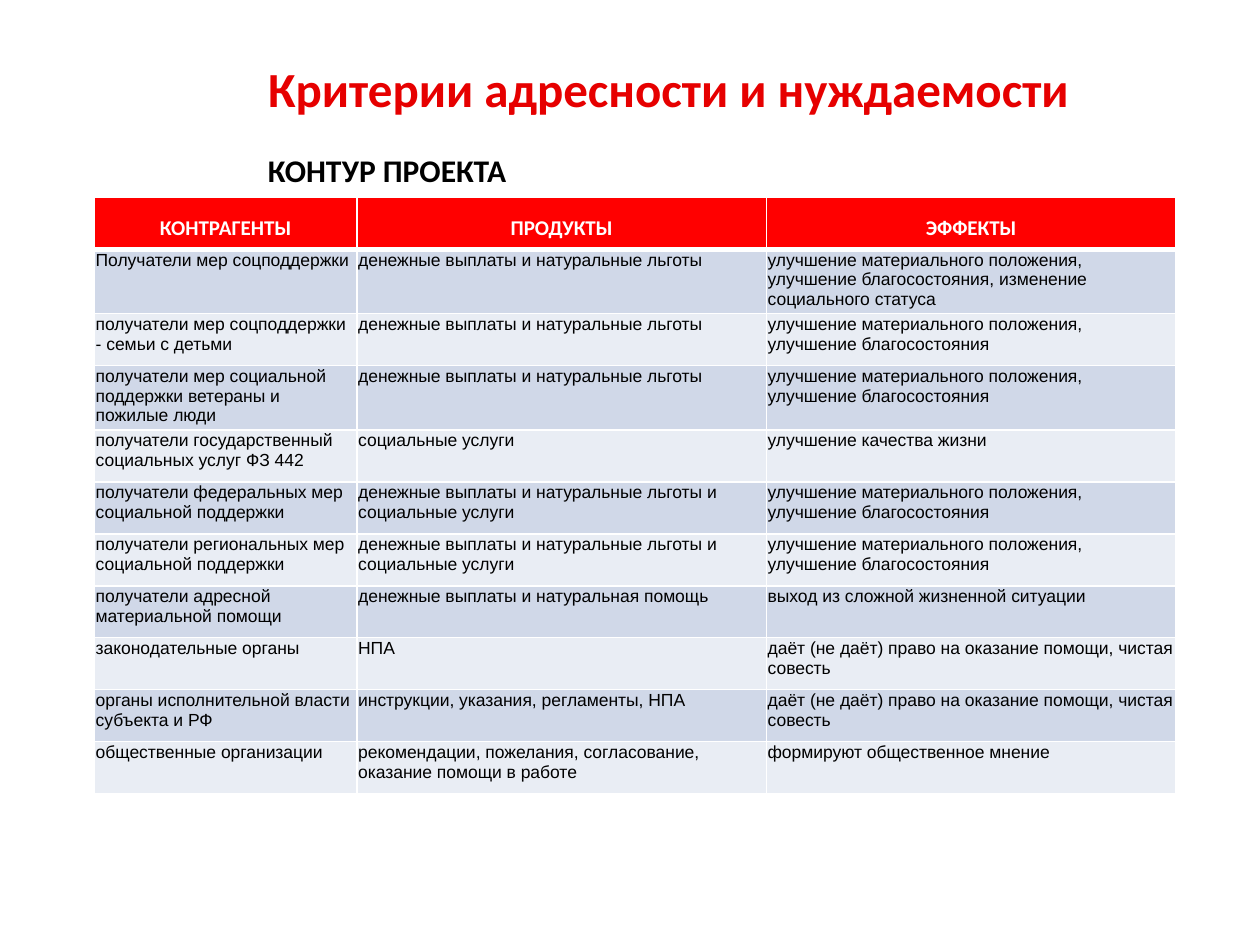
from pptx import Presentation
from pptx.dml.color import RGBColor
from pptx.enum.text import MSO_ANCHOR, MSO_AUTO_SIZE, PP_ALIGN
from pptx.oxml.ns import qn
from pptx.util import Pt
from lxml.etree import SubElement

TITLE_RED = RGBColor(0xE6, 0x00, 0x00)
HEADER_RED = RGBColor(0xFF, 0x00, 0x00)
BLACK = RGBColor(0x00, 0x00, 0x00)
WHITE = RGBColor(0xFF, 0xFF, 0xFF)
BANDS = [RGBColor(0xD0, 0xD8, 0xE8), RGBColor(0xE9, 0xED, 0xF4)]

PAYMENTS = "денежные выплаты и натуральные льготы"
PAYMENTS_AND_SERVICES = PAYMENTS + " и социальные услуги"
WELFARE = "улучшение материального положения, улучшение благосостояния"
CLEAR_CONSCIENCE = "даёт (не даёт) право на оказание помощи, чистая совесть"

HEADERS = ["КОНТРАГЕНТЫ", "ПРОДУКТЫ", "ЭФФЕКТЫ"]
ROWS = [
    ["Получатели мер соцподдержки", PAYMENTS, WELFARE + ", изменение социального статуса"],
    ["получатели мер соцподдержки - семьи с детьми", PAYMENTS, WELFARE],
    ["получатели мер социальной поддержки ветераны и пожилые люди", PAYMENTS, WELFARE],
    ["получатели государственный социальных услуг ФЗ 442", "социальные услуги",
     "улучшение качества жизни"],
    ["получатели федеральных мер социальной поддержки", PAYMENTS_AND_SERVICES, WELFARE],
    ["получатели региональных мер социальной поддержки", PAYMENTS_AND_SERVICES, WELFARE],
    ["получатели адресной материальной помощи", "денежные выплаты и натуральная помощь",
     "выход из сложной жизненной ситуации"],
    ["законодательные органы", "НПА", CLEAR_CONSCIENCE],
    ["органы исполнительной власти субъекта и РФ", "инструкции, указания, регламенты, НПА",
     CLEAR_CONSCIENCE],
    ["общественные организации",
     "рекомендации, пожелания, согласование, оказание помощи в работе",
     "формируют общественное мнение"],
]


def write_text(frame, text, size, color=BLACK, font="Calibri", bold=True,
               align=PP_ALIGN.LEFT, line_spacing=None):
    paragraph = frame.paragraphs[0]
    paragraph.alignment = align
    paragraph.line_spacing = line_spacing
    run = paragraph.add_run()
    run.text = text
    run.font.name = font
    run.font.size = Pt(size)
    run.font.bold = bold
    run.font.color.rgb = color


class SlideBuilder:
    def __init__(self, presentation):
        self.slide = presentation.slides.add_slide(presentation.slide_layouts[5])

    def title(self, text, left, top, width, height):
        shape = self.slide.shapes.title
        shape.left, shape.top = Pt(left), Pt(top)
        shape.width, shape.height = Pt(width), Pt(height)
        frame = shape.text_frame
        frame.auto_size = MSO_AUTO_SIZE.NONE
        frame.vertical_anchor = MSO_ANCHOR.MIDDLE
        write_text(frame, text, 28, TITLE_RED)

    def label(self, text, left, top, width, height):
        shape = self.slide.shapes.add_textbox(Pt(left), Pt(top), Pt(width), Pt(height))
        frame = shape.text_frame
        frame.word_wrap = True
        frame.auto_size = MSO_AUTO_SIZE.SHAPE_TO_FIT_TEXT
        write_text(frame, text, 18)

    def borders(self, cell, top=1, bottom=1):
        properties = cell._tc.get_or_add_tcPr()
        for side, width in (("L", 1), ("R", 1), ("T", top), ("B", bottom)):
            line = SubElement(properties, qn(f"a:ln{side}"), w=str(Pt(width)))
            fill = SubElement(line, qn("a:solidFill"))
            SubElement(fill, qn("a:srgbClr"), val=str(WHITE))

    def fill(self, cell, color):
        cell.fill.solid()
        cell.fill.fore_color.rgb = color

    def header_cell(self, cell, text):
        self.borders(cell, bottom=3)
        self.fill(cell, HEADER_RED)
        write_text(cell.text_frame, text, 12, WHITE, align=PP_ALIGN.CENTER, line_spacing=1.5)

    def body_cell(self, cell, text, row_index):
        self.borders(cell, top=3 if row_index == 0 else 1)
        self.fill(cell, BANDS[row_index % 2])
        cell.margin_left = cell.margin_right = cell.margin_top = Pt(0.7)
        cell.margin_bottom = Pt(0)
        write_text(cell.text_frame, text, 10, font="Arial", bold=False)

    def table(self, headers, rows, left, top, column_widths, header_height, row_height):
        frame = self.slide.shapes.add_table(
            len(rows) + 1, len(headers), Pt(left), Pt(top),
            Pt(sum(column_widths)), Pt(header_height + row_height * len(rows)))
        table = frame.table
        for column, width in zip(table.columns, column_widths):
            column.width = Pt(width)
        for row in table.rows:
            row.height = Pt(row_height)
        table.rows[0].height = Pt(header_height)
        for column_index, text in enumerate(headers):
            self.header_cell(table.cell(0, column_index), text)
        for row_index, row in enumerate(rows):
            for column_index, text in enumerate(row):
                self.body_cell(table.cell(row_index + 1, column_index), text, row_index)


def main():
    presentation = Presentation()
    presentation.slide_width = Pt(720)
    presentation.slide_height = Pt(540)
    builder = SlideBuilder(presentation)
    builder.title("Критерии адресности и нуждаемости", 146, 36, 515, 28)
    builder.label("КОНТУР ПРОЕКТА", 146, 83, 360, 29)
    builder.table(HEADERS, ROWS, 54, 112.5, [150, 234, 234], 30, 29.7)
    presentation.save("out.pptx")


if __name__ == "__main__":
    main()
